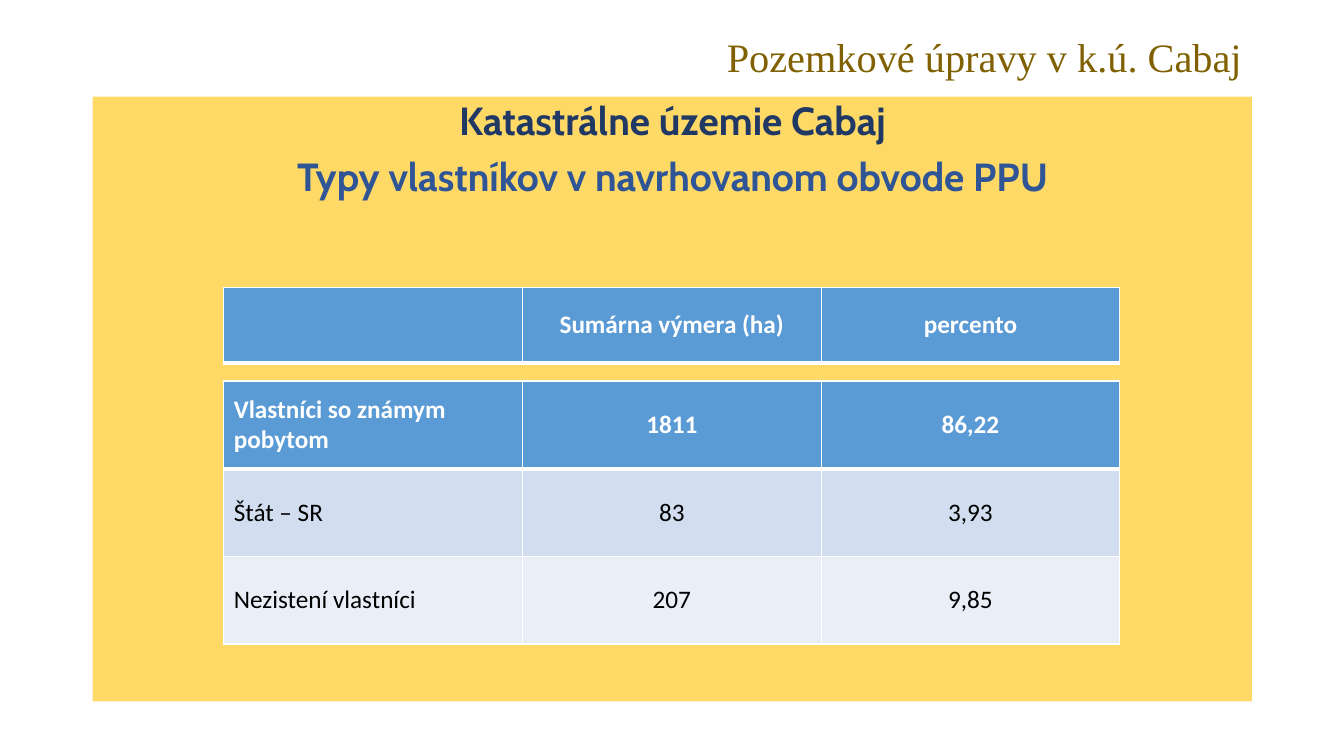
from lxml import etree
from pptx import Presentation
from pptx.dml.color import RGBColor
from pptx.enum.shapes import MSO_SHAPE
from pptx.enum.text import MSO_ANCHOR, PP_ALIGN
from pptx.oxml.ns import qn
from pptx.util import Inches, Pt

LEFT, CENTER, RIGHT = PP_ALIGN.LEFT, PP_ALIGN.CENTER, PP_ALIGN.RIGHT
TOP, MIDDLE = MSO_ANCHOR.TOP, MSO_ANCHOR.MIDDLE

WHITE = RGBColor(0xFF, 0xFF, 0xFF)
BLACK = RGBColor(0, 0, 0)
OLIVE = RGBColor(0x80, 0x60, 0x00)
GOLD = RGBColor(0xFF, 0xD9, 0x66)
NAVY = RGBColor(0x20, 0x38, 0x64)
BLUE = RGBColor(0x2F, 0x55, 0x97)
HEADER = RGBColor(0x5B, 0x9B, 0xD5)
BAND_1 = RGBColor(0xD2, 0xDE, 0xEF)
BAND_2 = RGBColor(0xEA, 0xEF, 0xF7)

MARGIN, CONTENT_W = 0.92, 11.5
TABLE_X, COL_W = 2.22, 2.963


def style(p, font, size, color, bold, align):
    p.font.name, p.font.size = font, Pt(size)
    p.font.color.rgb, p.font.bold = color, bold
    p.alignment = align


def add_grid(s, y, row_h, rows):
    """Add a table; each row is (fill, is_header, texts)."""
    n_cols = len(rows[0][2])
    table = s.shapes.add_table(len(rows), n_cols, Inches(TABLE_X), Inches(y),
                               Inches(COL_W * n_cols), Inches(row_h * len(rows))).table
    for r, (fill, is_header, texts) in enumerate(rows):
        table.rows[r].height = Inches(row_h)
        for c, text in enumerate(texts):
            cell = table.cell(r, c)
            cell.text = text
            cell.vertical_anchor = MIDDLE
            style(cell.text_frame.paragraphs[0], "Calibri", 18,
                  WHITE if is_header else BLACK, is_header, CENTER if c else LEFT)
            # White borders, thicker under a header row
            tc_pr = cell._tc.get_or_add_tcPr()
            after_header = r > 0 and rows[r - 1][1]
            widths = {"a:lnL": 1, "a:lnR": 1, "a:lnT": 3 if after_header else 1,
                      "a:lnB": 3 if is_header else 1}
            for tag, width in widths.items():
                ln = etree.SubElement(tc_pr, qn(tag), w=str(Pt(width)))
                solid = etree.SubElement(ln, qn("a:solidFill"))
                etree.SubElement(solid, qn("a:srgbClr"), val=str(WHITE))
            cell.fill.solid()
            cell.fill.fore_color.rgb = fill


prs = Presentation()
prs.slide_width, prs.slide_height = Inches(13.333), Inches(7.5)
s = prs.slides.add_slide(prs.slide_layouts[5])

# Title
title = s.shapes.title
title.left, title.top = Inches(MARGIN), Inches(0.4)
title.width, title.height = Inches(CONTENT_W), Inches(0.37)
tf = title.text_frame
tf.text = "Pozemkové úpravy v k.ú. Cabaj"
tf.vertical_anchor = MIDDLE
p = tf.paragraphs[0]
style(p, "Times New Roman", 28.8, OLIVE, False, RIGHT)
p.line_spacing = 0.9

# Yellow panel with two headings
panel = s.shapes.add_shape(MSO_SHAPE.RECTANGLE, Inches(MARGIN), Inches(0.96),
                           Inches(CONTENT_W), Inches(6))
panel.shadow.inherit = False
panel.fill.solid()
panel.fill.fore_color.rgb = GOLD
panel.line.fill.background()
tf = panel.text_frame
tf.word_wrap = True
tf.vertical_anchor = TOP
tf.text = "Katastrálne územie Cabaj\nTypy vlastníkov v navrhovanom obvode PPU"
for p, color in zip(tf.paragraphs, (NAVY, BLUE)):
    style(p, "Cabin", 28, color, True, CENTER)
    p.line_spacing = 0.9
    p.space_before = Pt(10)

# Owner types table and its separate heading row
add_grid(s, 3.78, 0.87, [
    (HEADER, True, ("Vlastníci so známym pobytom", "1811", "86,22")),
    (BAND_1, False, ("Štát – SR", "83", "3,93")),
    (BAND_2, False, ("Nezistení vlastníci", "207", "9,85")),
])
add_grid(s, 2.85, 0.75, [(HEADER, True, ("", "Sumárna výmera (ha)", "percento"))])

prs.save("out.pptx")
